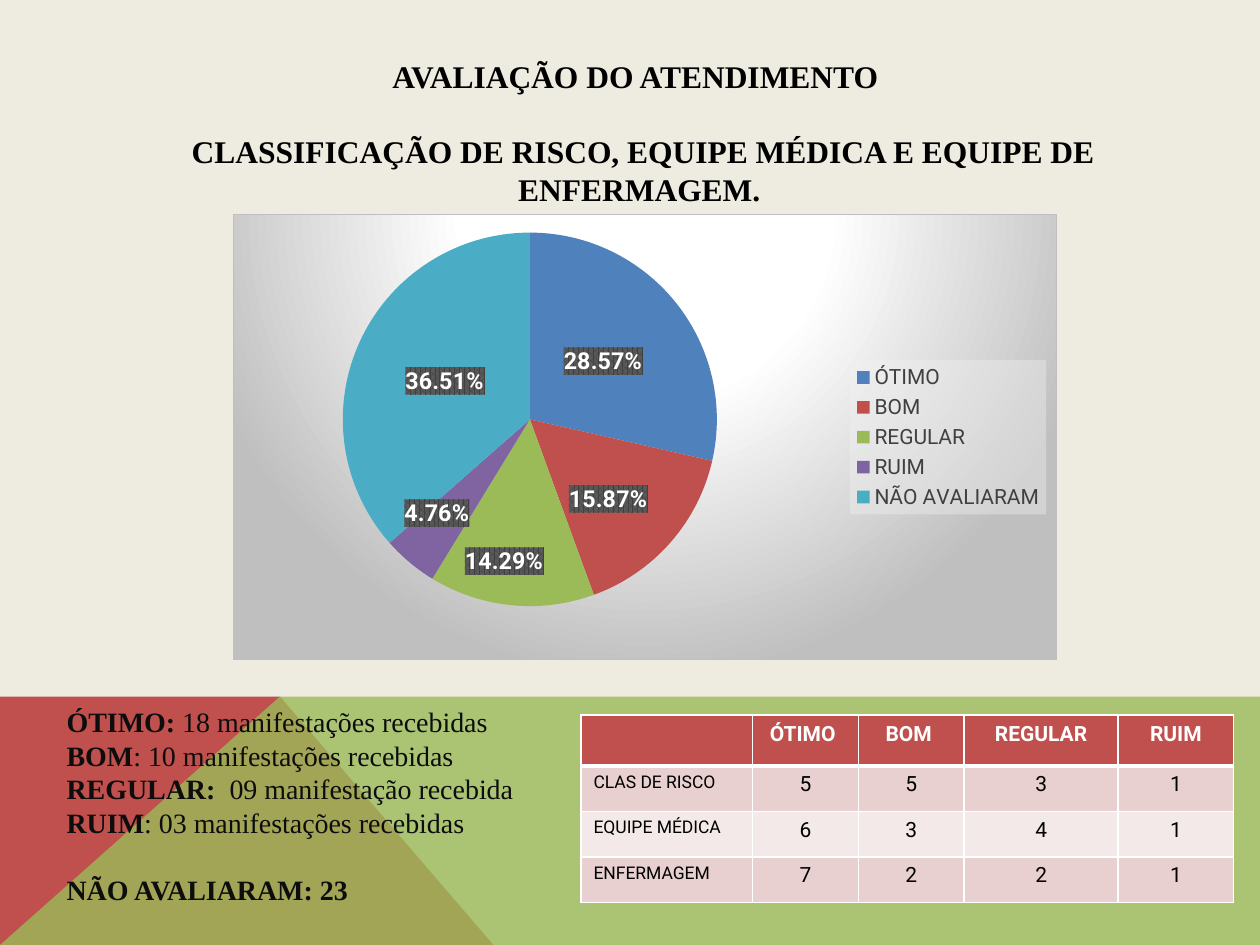
from copy import deepcopy
from typing import NamedTuple

from lxml import etree
from pptx import Presentation
from pptx.chart.data import CategoryChartData
from pptx.dml.color import RGBColor
from pptx.enum.chart import XL_CHART_TYPE, XL_LABEL_POSITION, XL_LEGEND_POSITION
from pptx.enum.text import MSO_ANCHOR, PP_ALIGN
from pptx.oxml import parse_xml
from pptx.oxml.ns import qn
from pptx.util import Pt

PIE = XL_CHART_TYPE.PIE
LABEL_CENTER = XL_LABEL_POSITION.CENTER
LEGEND_RIGHT = XL_LEGEND_POSITION.RIGHT
TOP, MIDDLE = MSO_ANCHOR.TOP, MSO_ANCHOR.MIDDLE
LEFT, CENTER = PP_ALIGN.LEFT, PP_ALIGN.CENTER
SERIF, SANS = "Times New Roman", "Roboto"
RED, GREEN, WHITE, BLACK = "C0504D", "9BBB59", "FFFFFF", "000000"
A = "http://schemas.openxmlformats.org/drawingml/2006/main"
C = "http://schemas.openxmlformats.org/drawingml/2006/chart"


class Box(NamedTuple):
    left: float
    top: float
    width: float
    height: float


class Run(NamedTuple):
    text: str
    bold: bool = False


class Para(NamedTuple):
    runs: list[Run]
    before: float = 0


class Slice(NamedTuple):
    name: str
    value: float
    color: str
    shift: tuple[float, float] | None = None


TITLE = [
    Para([Run("AVALIAÇÃO DO ATENDIMENTO ", True)]),
    Para([Run(" CLASSIFICAÇÃO DE RISCO, EQUIPE MÉDICA E EQUIPE DE ENFERMAGEM.", True)], 21),
]
COUNTS = [
    Para([Run("ÓTIMO: ", True), Run("18 manifestações recebidas")]),
    Para([Run("BOM", True), Run(": 10 manifestações recebidas")]),
    Para([Run("REGULAR:  ", True), Run("09 manifestação recebida")]),
    Para([Run("RUIM", True), Run(": 03 manifestações recebidas")]),
    Para([Run("NÃO AVALIARAM: 23", True)], 19),
]
SLICES = [
    Slice("ÓTIMO", 28.57, "4F81BD"),
    Slice("BOM", 15.87, RED, (0.01, 0.04)),
    Slice("REGULAR", 14.29, GREEN, (-0.02, 0.11)),
    Slice("RUIM", 4.76, "8064A2", (-0.04, 0.05)),
    Slice("NÃO AVALIARAM", 36.51, "4BACC6"),
]
ROWS = [
    ["", "ÓTIMO ", "BOM ", "REGULAR", "RUIM"],
    ["CLAS DE RISCO", "5", "5", "3", "1"],
    ["EQUIPE MÉDICA", "6", "3", "4", "1"],
    ["ENFERMAGEM", "7", "2", "2", "1"],
]


def rgb(color: str) -> RGBColor:
    """Turn a hex string into a colour."""
    return RGBColor.from_string(color)


def set_font(font, color: str, **values) -> None:
    """Apply format values and a colour to a font."""
    for key, value in values.items():
        setattr(font, key, value)
    font.color.rgb = rgb(color)


def add_polygon(s, points: list[tuple[float, float]], color: str, alpha: int = 100) -> None:
    """Draw a filled outline without a line."""
    fb = s.shapes.build_freeform(*points[0], scale=Pt(1))
    fb.add_line_segments(points[1:], close=True)
    sp = fb.convert_to_shape()
    sp.shadow.inherit = False
    sp.fill.solid()
    sp.fill.fore_color.rgb = rgb(color)
    sp.line.fill.background()
    if alpha < 100:
        clr = sp.fill._xPr.find(f".//{qn('a:srgbClr')}")
        etree.SubElement(clr, qn("a:alpha"), val=str(alpha * 1000))


def add_text(s, box: Box, paras: list[Para], size: float, color: str, align, anchor) -> None:
    """Draw a wrapped text box of mixed bold and plain runs."""
    tf = s.shapes.add_textbox(*map(Pt, box)).text_frame
    tf.word_wrap = True
    tf.vertical_anchor = anchor
    for i, para in enumerate(paras):
        p = tf.add_paragraph() if i else tf.paragraphs[0]
        p.alignment = align
        p.space_before = Pt(para.before)
        for run in para.runs:
            r = p.add_run()
            r.text = run.text
            set_font(r.font, color, name=SERIF, size=Pt(size), bold=run.bold)


def sp_pr(fill: str):
    """Wrap a fill in chart shape properties."""
    return parse_xml(f'<c:spPr xmlns:c="{C}" xmlns:a="{A}">{fill}</c:spPr>')


def solid(color: str, alpha: int = 100) -> str:
    """Give the XML of a solid fill."""
    return (f'<a:solidFill><a:srgbClr val="{color}"><a:alpha val="{alpha * 1000}"/>'
            "</a:srgbClr></a:solidFill>")


def layout(x: float, y: float, extra: str = ""):
    """Give a manual chart layout."""
    return parse_xml(f'<c:layout xmlns:c="{C}"><c:manualLayout>{extra}<c:x val="{x}"/>'
                     f'<c:y val="{y}"/></c:manualLayout></c:layout>')


def style_labels(series) -> None:
    """Format the percent labels and shift those of the small slices."""
    labels = series.data_labels
    set_font(labels.font, WHITE, name=SANS, size=Pt(13.3), bold=True)
    values = {"show_percentage": True, "show_value": False, "number_format": "0.00%",
              "number_format_is_linked": False, "position": LABEL_CENTER}
    for key, value in values.items():
        setattr(labels, key, value)
    el = series._element.find(qn("c:dLbls"))
    el.find(qn("c:numFmt")).addnext(sp_pr(
        '<a:pattFill prst="pct75"><a:fgClr><a:srgbClr val="404040"/></a:fgClr>'
        '<a:bgClr><a:srgbClr val="595959"/></a:bgClr></a:pattFill>'))
    shared = [child for child in el if child.tag != qn("c:showLeaderLines")]
    shifted = [(i, part.shift) for i, part in enumerate(SLICES) if part.shift]
    for place, (i, shift) in enumerate(shifted):
        label = parse_xml(f'<c:dLbl xmlns:c="{C}"><c:idx val="{i}"/></c:dLbl>')
        label.append(layout(*shift))
        label.extend(deepcopy(shared))
        el.insert(place, label)


def add_pie(s, box: Box) -> None:
    """Draw the pie chart of ratings."""
    data = CategoryChartData()
    data.categories = [part.name for part in SLICES]
    data.add_series("Series 1", [part.value for part in SLICES])
    chart = s.shapes.add_chart(PIE, *map(Pt, box), data).chart
    chart.has_title = False
    set_font(chart.font, BLACK, name=SANS, size=Pt(10))
    chart.has_legend = True
    chart.legend.position = LEGEND_RIGHT
    chart.legend.include_in_layout = False
    set_font(chart.legend.font, "404040", name=SANS, size=Pt(12))
    chart.legend._element.find(qn("c:txPr")).addprevious(sp_pr(solid("F2F2F2", 39)))
    plot = chart.plots[0]
    plot.vary_by_categories = True
    series = plot.series[0]
    for i, part in enumerate(SLICES):
        fill = series.points[i].format.fill
        fill.solid()
        fill.fore_color.rgb = rgb(part.color)
    style_labels(series)
    stops = "".join(f'<a:gs pos="{pos}000"><a:srgbClr val="{color}"/></a:gs>'
                    for pos, color in [(0, WHITE), (39, WHITE), (100, "BFBFBF")])
    chart.element.find(qn("c:chart")).addnext(sp_pr(
        f'<a:gradFill><a:gsLst>{stops}</a:gsLst><a:path path="circle"><a:fillToRect l="50000" '
        't="-80000" r="50000" b="180000"/></a:path></a:gradFill>'
        f'<a:ln w="{Pt(0.75)}">{solid("BFBFBF")}</a:ln>'))
    area = chart.element.find(f".//{qn('c:plotArea')}")
    for old in area.findall(qn("c:layout")):
        area.remove(old)
    frame = layout(0.13, 0.04, '<c:layoutTarget val="inner"/><c:xMode val="edge"/>'
                   '<c:yMode val="edge"/>')
    for tag, size in (("c:w", 0.46), ("c:h", 0.84)):
        etree.SubElement(frame[0], qn(tag), val=str(size))
    area.insert(0, frame)


def add_ratings_table(s, box: Box, widths: list[float], heights: list[float]) -> None:
    """Draw the table of ratings by team."""
    table = s.shapes.add_table(len(ROWS), len(widths), *map(Pt, box)).table
    table.first_row = table.horz_banding = False
    for column, width in zip(table.columns, widths):
        column.width = Pt(width)
    for i, (row, height) in enumerate(zip(ROWS, heights)):
        table.rows[i].height = Pt(height)
        for j, text in enumerate(row):
            cell = table.cell(i, j)
            for side in "LRTB":
                weight = 3 if (side, i) in (("B", 0), ("T", 1)) else 1
                cell._tc.get_or_add_tcPr().append(parse_xml(
                    f'<a:ln{side} xmlns:a="{A}" w="{Pt(weight)}">{solid(WHITE)}</a:ln{side}>'))
            cell.fill.solid()
            cell.fill.fore_color.rgb = rgb([RED, "E8D0D0", "F4E9E9", "E8D0D0"][i])
            p = cell.text_frame.paragraphs[0]
            p.alignment = CENTER if j else LEFT
            r = p.add_run()
            r.text = text
            set_font(r.font, BLACK if i else WHITE, name=SANS,
                     size=Pt(10 if i and not j else 12), bold=not i)


def main() -> None:
    """Build and save the slide."""
    prs = Presentation()
    prs.slide_width, prs.slide_height = Pt(720), Pt(540)
    s = prs.slides.add_slide(prs.slide_layouts[6])
    s.background.fill.solid()
    s.background.fill.fore_color.rgb = rgb("EEECE1")
    add_polygon(s, [(0, 540), (0, 397.5), (160.5, 397.5), (281.5, 540)], RED)
    add_polygon(s, [(0, 540), (160.5, 397.5), (720, 397.5), (720, 540)], GREEN, 80)
    add_text(s, Box(44.6, 28.8, 641.5, 93.6), TITLE, 18, BLACK, CENTER, MIDDLE)
    add_pie(s, Box(133.2, 122.4, 470.9, 254.9))
    add_text(s, Box(31, 399, 318, 145), COUNTS, 16, "0D0D0D", LEFT, TOP)
    add_ratings_table(s, Box(332, 408.7, 373, 107), [98, 60.5, 60.5, 88, 66], [29, 26, 26, 26])
    prs.save("out.pptx")


if __name__ == "__main__":
    main()
